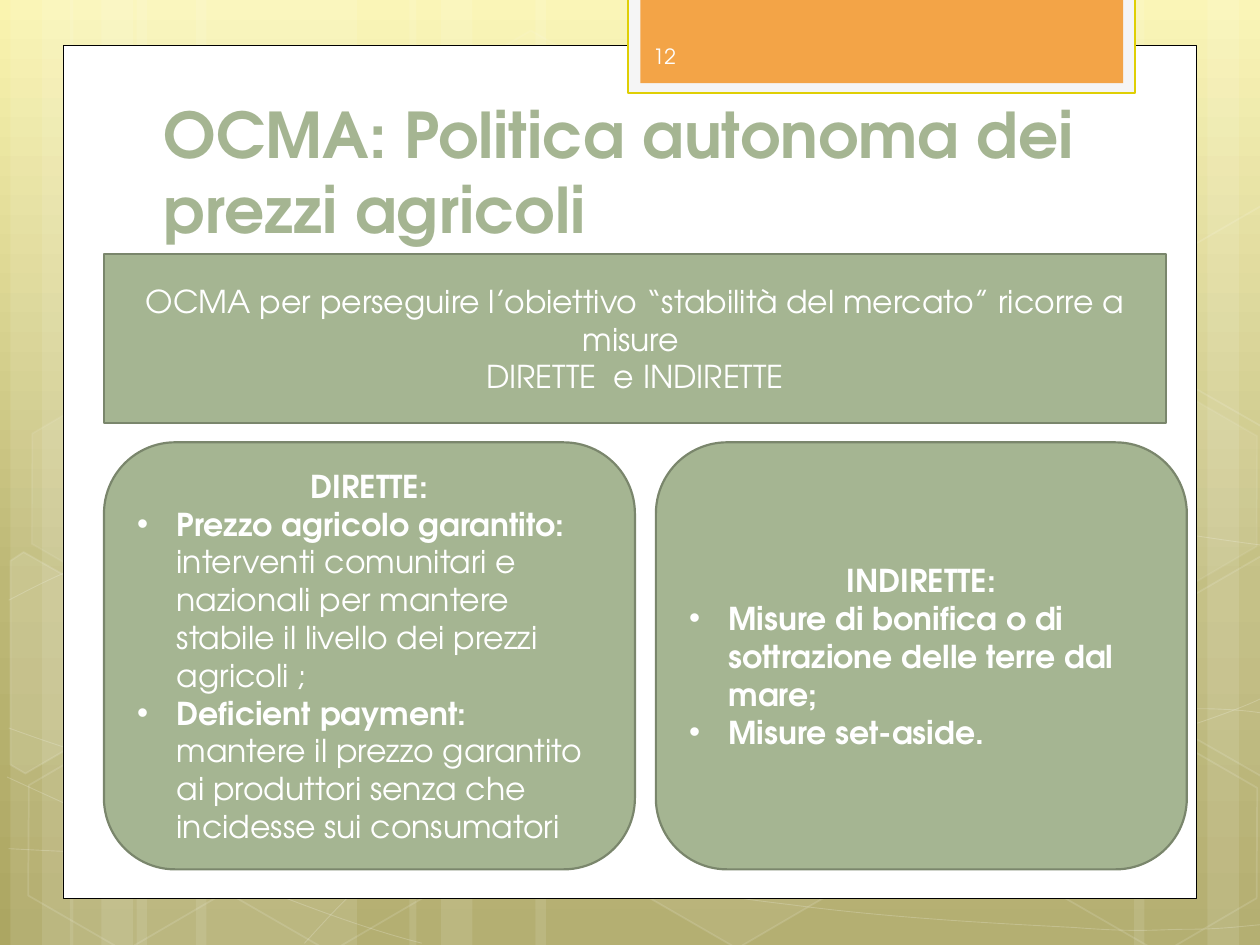
from lxml import etree
from pptx import Presentation
from pptx.dml.color import RGBColor
from pptx.enum.shapes import MSO_SHAPE
from pptx.enum.text import MSO_ANCHOR, MSO_AUTO_SIZE, PP_ALIGN
from pptx.oxml.ns import qn
from pptx.util import Pt

RECTANGLE = MSO_SHAPE.RECTANGLE
ROUNDED = MSO_SHAPE.ROUNDED_RECTANGLE
HEXAGON = MSO_SHAPE.HEXAGON
LEFT, CENTER = PP_ALIGN.LEFT, PP_ALIGN.CENTER
MIDDLE, BOTTOM = MSO_ANCHOR.MIDDLE, MSO_ANCHOR.BOTTOM

FONT = "TeX Gyre Adventor"
WHITE = RGBColor(0xFF, 0xFF, 0xFF)
OFF_WHITE = RGBColor(0xFE, 0xFE, 0xFE)
BLACK = RGBColor(0, 0, 0)
SAGE = RGBColor(0xA5, 0xB5, 0x92)
DARK_SAGE = RGBColor(0x7A, 0x86, 0x6C)
ORANGE = RGBColor(0xF3, 0xA4, 0x47)
YELLOW = RGBColor(0xDF, 0xCF, 0x04)
PALE_GREY = RGBColor(0xF5, 0xF5, 0xF5)
BACKGROUND_STOPS = [(0, "FAF4AF"), (62, "BDB876"), (100, "ACA662")]

# Backdrop: (left, width) of each stripe
STRIPES = [(78, 126), (6, 36), (24, 60), (112, 126), (40, 36), (58, 60),
           (528, 126), (690, 36), (648, 60), (306, 222), (234, 36), (252, 60)]
# Each curve: start point, then cubic segments (two controls and an end)
CURVES = [
    ((5, 485), [(44, 487, 83, 489, 137, 488), (191, 487, 258, 486, 330, 479),
                (402, 472, 504, 458, 570, 444), (636, 430, 703, 409, 725, 397)]),
    ((5, 343), [(26, 332, 47, 321, 87, 310), (128, 299, 187, 284, 250, 279),
                (314, 274, 392, 273, 471, 279), (550, 284, 682, 307, 725, 312)]),
    ((4, 444), [(91, 484, 178, 523, 241, 539)]),
    ((5, 416), [(27, 424, 50, 432, 92, 443), (134, 454, 197, 472, 257, 485),
                (317, 497, 392, 510, 452, 517), (512, 525, 576, 528, 614, 530),
                (652, 533, 662, 531, 680, 531), (699, 531, 712, 529, 725, 528)]),
    ((174, 539), [(187, 525, 200, 510, 217, 497), (235, 484, 259, 470, 279, 460),
                  (299, 450, 312, 446, 338, 438), (364, 431, 413, 421, 438, 416),
                  (464, 411, 467, 411, 490, 409), (512, 407, 547, 405, 572, 405),
                  (597, 404, 638, 405, 638, 405), (638, 405, 686, 405, 686, 405),
                  (699, 405, 711, 406, 718, 407), (724, 408, 722, 407, 725, 408)]),
]
# Left, top, fill opacity (None for no fill), line opacity
HEXAGONS = [(240.5, 26, 4, 8), (358, 424, 6, 12), (8, 425.5, None, 12),
            (10, 224.5, 7, 8), (125.5, 426, None, 12), (542, 326, 10, 12),
            (600.5, 427, None, 12), (600.5, 226, 7, 8)]
# Hexagons cut by the page edge: points, fill opacity
CUT_HEXAGONS = [
    ([(6, 320.5), (13.5, 315.5), (69, 347), (68.5, 410.5), (14.5, 442), (6, 437)], 10),
    ([(666.5, 349), (721, 317.5), (726.5, 321), (726.5, 441.5), (721.5, 444), (666.5, 412.5)], 4),
    ([(666.5, 149), (721, 117.5), (727, 121), (726.5, 241), (721.5, 244), (666.5, 212.5)], None),
]


def set_opacity(fill, percent):
    color = fill._xPr.find(".//" + qn("a:srgbClr"))
    etree.SubElement(color, qn("a:alpha"), val=str(percent * 1000))


def paint(shape, fill=None, line=None, width=1, fill_opacity=100, line_opacity=100):
    shape.shadow.inherit = False
    if fill is None:
        shape.fill.background()
    else:
        shape.fill.solid()
        shape.fill.fore_color.rgb = fill
        if fill_opacity < 100:
            set_opacity(shape.fill, fill_opacity)
    if line is None:
        shape.line.fill.background()
    else:
        shape.line.color.rgb = line
        shape.line.width = Pt(width)
        if line_opacity < 100:
            set_opacity(shape.line.fill, line_opacity)


def add_box(page, kind, box, **look):
    shape = page.shapes.add_shape(kind, *map(Pt, box))
    paint(shape, **look)
    return shape


def add_outline(page, points, close, **look):
    start, *rest = [(Pt(x), Pt(y)) for x, y in points]
    builder = page.shapes.build_freeform(*start)
    builder.add_line_segments(rest, close=close)
    shape = builder.convert_to_shape()
    paint(shape, **look)
    return shape


def bend(shape):
    """Turn every three straight segments into one cubic curve."""
    segments = list(shape._element.iter(qn("a:lnTo")))
    for first in range(0, len(segments), 3):
        curve = etree.Element(qn("a:cubicBezTo"))
        segments[first].addprevious(curve)
        for segment in segments[first:first + 3]:
            curve.append(segment[0])
            segment.getparent().remove(segment)


def add_bullet(para):
    properties = para._p.get_or_add_pPr()
    properties.set("marL", str(Pt(22.5)))
    properties.set("indent", str(-Pt(22.5)))
    etree.SubElement(properties, qn("a:buFont"), typeface="Arial")
    etree.SubElement(properties, qn("a:buChar"), char="•")


def write(para, text, size=18, bold=False, color=WHITE):
    span = para.add_run()
    span.text = text
    span.font.name = FONT
    span.font.size = Pt(size)
    span.font.bold = bold
    span.font.color.rgb = color


def fill_frame(shape, rows, anchor=MIDDLE, **style):
    """Each row is (alignment, bulleted, [(text, bold), ...])."""
    frame = shape.text_frame
    frame.word_wrap = True
    frame.auto_size = MSO_AUTO_SIZE.NONE
    frame.vertical_anchor = anchor
    for index, (alignment, bulleted, spans) in enumerate(rows):
        para = frame.add_paragraph() if index else frame.paragraphs[0]
        para.alignment = alignment
        if bulleted:
            add_bullet(para)
        for text, bold in spans:
            write(para, text, bold=bold, **style)


def draw_backdrop(page, box):
    left, top, width, height = box
    # Gradient
    fill = page.background.fill
    fill.gradient()
    fill.gradient_angle = 270
    stops = page.background._cSld.find(".//" + qn("a:gsLst"))
    for stop in list(stops):
        stops.remove(stop)
    for position, color in BACKGROUND_STOPS:
        stop = etree.SubElement(stops, qn("a:gs"), pos=str(position * 1000))
        etree.SubElement(stop, qn("a:srgbClr"), val=color)
    # Stripes, curves and hexagons
    for offset, stripe_width in STRIPES:
        add_box(page, RECTANGLE, (left + offset, top, stripe_width, height),
                fill=WHITE, fill_opacity=10)
    for start, segments in CURVES:
        points = [start] + [pair for segment in segments
                            for pair in zip(segment[::2], segment[1::2])]
        bend(add_outline(page, [(left + x, top + y) for x, y in points], False,
                         line=WHITE, width=0.5, line_opacity=20))
    for x, y, opacity, line_opacity in HEXAGONS:
        hexagon = add_box(page, HEXAGON, (left + x, top + y, 126, 109.5),
                          fill=WHITE if opacity else None, fill_opacity=opacity,
                          line=WHITE, line_opacity=line_opacity)
        hexagon.adjustments[0] = 0.285
        hexagon.rotation = 30
    for points, opacity in CUT_HEXAGONS:
        add_outline(page, [(left + x, top + y) for x, y in points], True,
                    fill=WHITE if opacity else None, fill_opacity=opacity,
                    line=WHITE, line_opacity=12)


def draw_tab(page, box):
    left, top, width, height = box
    add_box(page, RECTANGLE, box, fill=PALE_GREY, line=YELLOW, width=1.25)
    add_box(page, RECTANGLE, (left + 7, top, width - 13.7, height - 5.5), fill=ORANGE)


def move_to_layout(page):
    """Keep the decoration in the layout, behind the slide's own parts."""
    for shape in list(page.shapes):
        if not shape.is_placeholder:
            page.slide_layout.shapes._spTree.append(shape._element)


def place_title(page, box, text):
    title = page.shapes.title
    title.left, title.top, title.width, title.height = map(Pt, box)
    fill_frame(title, [(LEFT, False, [(text, True)])], BOTTOM, size=36, color=SAGE)


def draw_panel(page, box, kind, rows):
    panel = add_box(page, kind, box, fill=SAGE, line=DARK_SAGE, width=1.25)
    fill_frame(panel, rows)


def place_number(page, box, text):
    number = page.shapes.add_textbox(*map(Pt, box))
    fill_frame(number, [(LEFT, False, [(text, False)])], size=12, color=OFF_WHITE)


def main():
    deck = Presentation()
    deck.slide_width, deck.slide_height = Pt(720), Pt(540)
    page = deck.slides.add_slide(deck.slide_layouts[5])

    # Decoration
    draw_backdrop(page, (0, 0, 720, 540))
    add_box(page, RECTANGLE, (36, 26, 648, 487.3), fill=WHITE, line=BLACK, width=0.5)
    draw_tab(page, (359, -1.5, 289.5, 54.5))
    move_to_layout(page)

    place_title(page, (86.4, 54.5, 553, 90), "OCMA: Politica autonoma dei prezzi agricoli")
    # Statement above the two kinds of measure
    draw_panel(page, (59.5, 145.2, 606.8, 96.5), RECTANGLE, [
        (CENTER, False, [("OCMA per perseguire l’obiettivo “stabilità del mercato” ricorre a misure ", False)]),
        (CENTER, False, [("DIRETTE  e INDIRETTE", False)])])
    measures = [
        [(CENTER, False, [("DIRETTE:", True)]),
         (LEFT, True, [("Prezzo agricolo garantito: ", True),
                       ("interventi comunitari e nazionali per mantere stabile il livello dei prezzi agricoli ;", False)]),
         (LEFT, True, [("Deficient payment: ", True),
                       ("mantere il prezzo garantito ai produttori senza che incidesse sui consumatori", False)])],
        [(CENTER, False, [("INDIRETTE:", True)]),
         (LEFT, True, [("Misure di bonifica o di sottrazione delle terre dal mare;", True)]),
         (LEFT, True, [("Misure set-aside.", True)])]]
    for column, rows in enumerate(measures):
        draw_panel(page, (59.4 + column * 315.4, 252.8, 303.4, 244), ROUNDED, rows)
    place_number(page, (366, 17.8, 105, 29), "12")

    deck.save("out.pptx")


if __name__ == "__main__":
    main()
